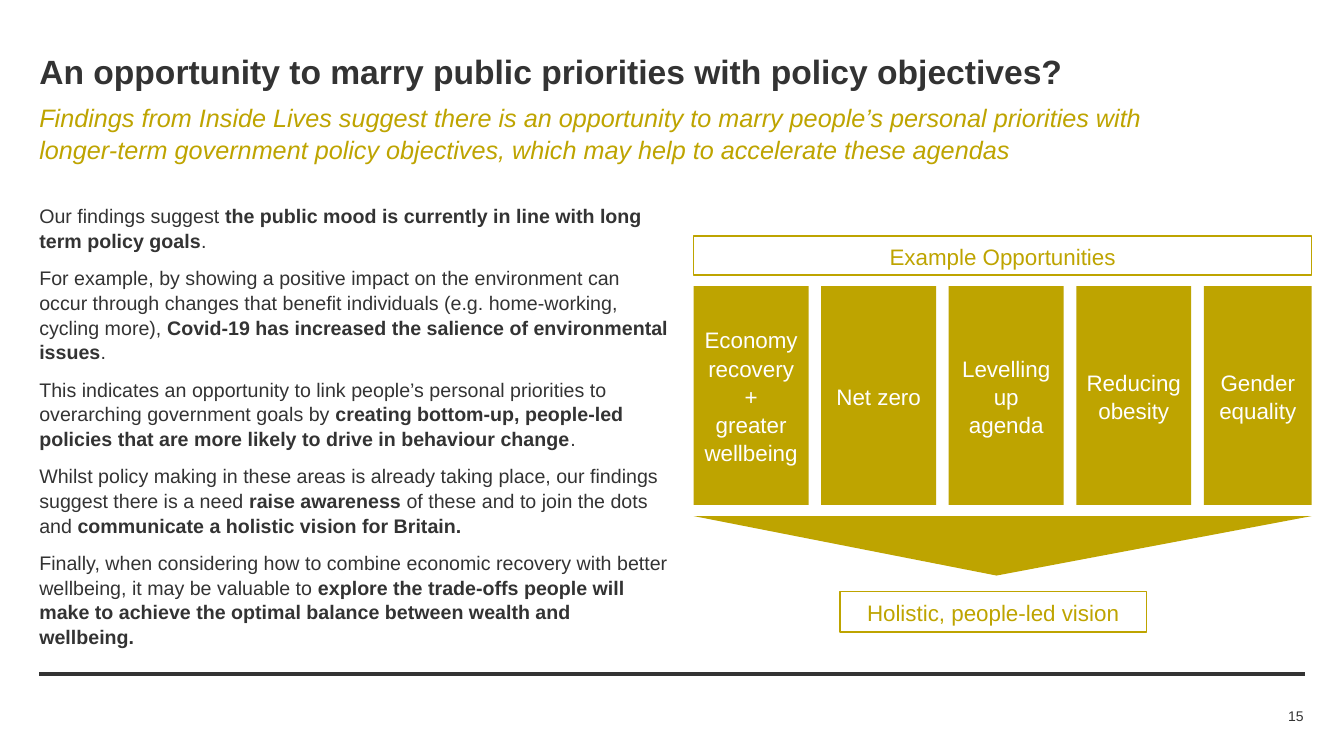
from lxml import etree
from pptx import Presentation
from pptx.dml.color import RGBColor
from pptx.enum.shapes import MSO_CONNECTOR as CONN, MSO_SHAPE as SHAPE
from pptx.enum.text import MSO_ANCHOR as ANCHOR, PP_ALIGN as ALIGN
from pptx.oxml.ns import qn
from pptx.util import Inches, Pt

DARK, GOLD, WHITE = "333333", "BEA400", "FFFFFF"

# Each paragraph is a list of (text, bold) runs
BODY = [
    [("Our findings suggest ", False),
     ("the public mood is currently in line with long term policy goals", True),
     (".", False)],
    [("For example, by showing a positive impact on the environment can occur "
      "through changes that benefit individuals (e.g. home-working, cycling more), ", False),
     ("Covid-19 has increased the salience of environmental issues", True),
     (".", False)],
    [("This indicates an opportunity to link people’s personal priorities to "
      "overarching government goals by ", False),
     ("creating bottom-up, people-led policies that are more likely to drive in "
      "behaviour change", True),
     (".", False)],
    [("Whilst policy making in these areas is already taking place, our findings "
      "suggest there is a need ", False),
     ("raise awareness ", True),
     ("of these and to join the dots and", False),
     (" communicate a holistic vision for Britain.", True)],
    [("Finally, when considering how to combine economic recovery with better "
      "wellbeing, it may be valuable to ", False),
     ("explore the trade-offs people will make to achieve the optimal balance "
      "between wealth and wellbeing.", True)],
]
SUBTITLE = ("Findings from Inside Lives suggest there is an opportunity to marry "
            "people’s personal priorities with longer-term government policy "
            "objectives, which may help to accelerate these agendas")
OPPORTUNITIES = [
    ["Economy recovery", "+", "greater wellbeing"],
    ["Net zero"],
    ["Levelling up agenda"],
    ["Reducing obesity"],
    ["Gender equality"],
]


def rgb(colour):
    return RGBColor.from_string(colour)


def place(s, left, top, width, height):
    s.left, s.top = Inches(left), Inches(top)
    s.width, s.height = Inches(width), Inches(height)


def write(tf, paragraphs, size, colour, align=ALIGN.LEFT, anchor=ANCHOR.MIDDLE,
          inset=0, italic=None):
    """Fill a text frame with paragraphs of (text, bold) runs."""
    tf.word_wrap = True
    tf.vertical_anchor = anchor
    tf.margin_left = tf.margin_right = Inches(inset)
    tf.margin_top = tf.margin_bottom = Inches(inset / 2)
    font = {"name": "Arial", "size": Pt(size), "italic": italic}
    for i, runs in enumerate(paragraphs):
        p = tf.paragraphs[0] if i == 0 else tf.add_paragraph()
        p.alignment, p.line_spacing = align, 1.05
        p.space_before = Pt(0)
        for text, bold in runs:
            r = p.add_run()
            r.text = text
            for name, value in {**font, "bold": bold}.items():
                setattr(r.font, name, value)
            r.font.color.rgb = rgb(colour)


def add_text(slide, box, paragraphs, size, colour, **layout):
    s = slide.shapes.add_textbox(*map(Inches, box))
    write(s.text_frame, paragraphs, size, colour, **layout)
    return s


def add_block(slide, kind, box, lines=(), filled=True):
    """Gold block with white text, or gold outline with gold text."""
    s = slide.shapes.add_shape(kind, *map(Inches, box))
    s.shadow.inherit = False
    if filled:
        s.fill.solid()
        s.fill.fore_color.rgb = rgb(GOLD)
        s.line.fill.background()
    else:
        s.fill.background()
        s.line.color.rgb = rgb(GOLD)
        s.line.width = Pt(1)
    if lines:
        write(s.text_frame, [[(line, False)] for line in lines], 16,
              WHITE if filled else GOLD, align=ALIGN.CENTER, inset=0.1)
    return s


def add_rule(slide, x1, x2, y):
    line = slide.shapes.add_connector(
        CONN.STRAIGHT, Inches(x1), Inches(y), Inches(x2), Inches(y))
    line.line.color.rgb = rgb(DARK)
    line.line.width = Pt(3)
    etree.SubElement(line._element.spPr, qn("a:effectLst"))


def main():
    prs = Presentation()
    prs.slide_width, prs.slide_height = Inches(13.33), Inches(7.5)
    slide = prs.slides.add_slide(prs.slide_layouts[5])

    # Heading
    title = slide.shapes.title
    place(title, 0.39, 0.47, 12.54, 0.44)
    write(title.text_frame,
          [[("An opportunity to marry public priorities with policy objectives?", True)]],
          24, DARK)
    add_text(slide, (0.39, 1, 11.48, 0.71), [[(SUBTITLE, False)]], 18, GOLD,
             anchor=ANCHOR.TOP, italic=True)

    # Findings
    findings = add_text(slide, (0.39, 2.04, 6.27, 4.37), BODY, 14, DARK)
    for p in findings.text_frame.paragraphs[1:]:
        p.space_before = Pt(9)

    # Opportunities, narrowing to the shared vision
    left, width, pitch, bar = 6.88, 6.13, 1.265, 1.14
    add_block(slide, SHAPE.RECTANGLE, (left, 2.34, width, 0.39),
              ["Example Opportunities"], filled=False)
    for i, lines in enumerate(OPPORTUNITIES):
        x = left + i * pitch
        add_block(slide, SHAPE.RECTANGLE,
                  (x, 2.84, min(bar, left + width - x), 2.17), lines)
    funnel = add_block(slide, SHAPE.ISOSCELES_TRIANGLE, (left, 5.12, width, 0.59))
    funnel.rotation = 180
    funnel.adjustments[0] = 0.51
    add_block(slide, SHAPE.RECTANGLE, (8.33, 5.87, 3.04, 0.4),
              ["Holistic, people-led vision"], filled=False)

    # Footer
    add_rule(slide, 0.39, 12.94, 6.69)
    add_text(slide, (11.87, 6.99, 1.06, 0.22), [[("15", False)]], 10, DARK,
             align=ALIGN.RIGHT)

    prs.save("out.pptx")


if __name__ == "__main__":
    main()
